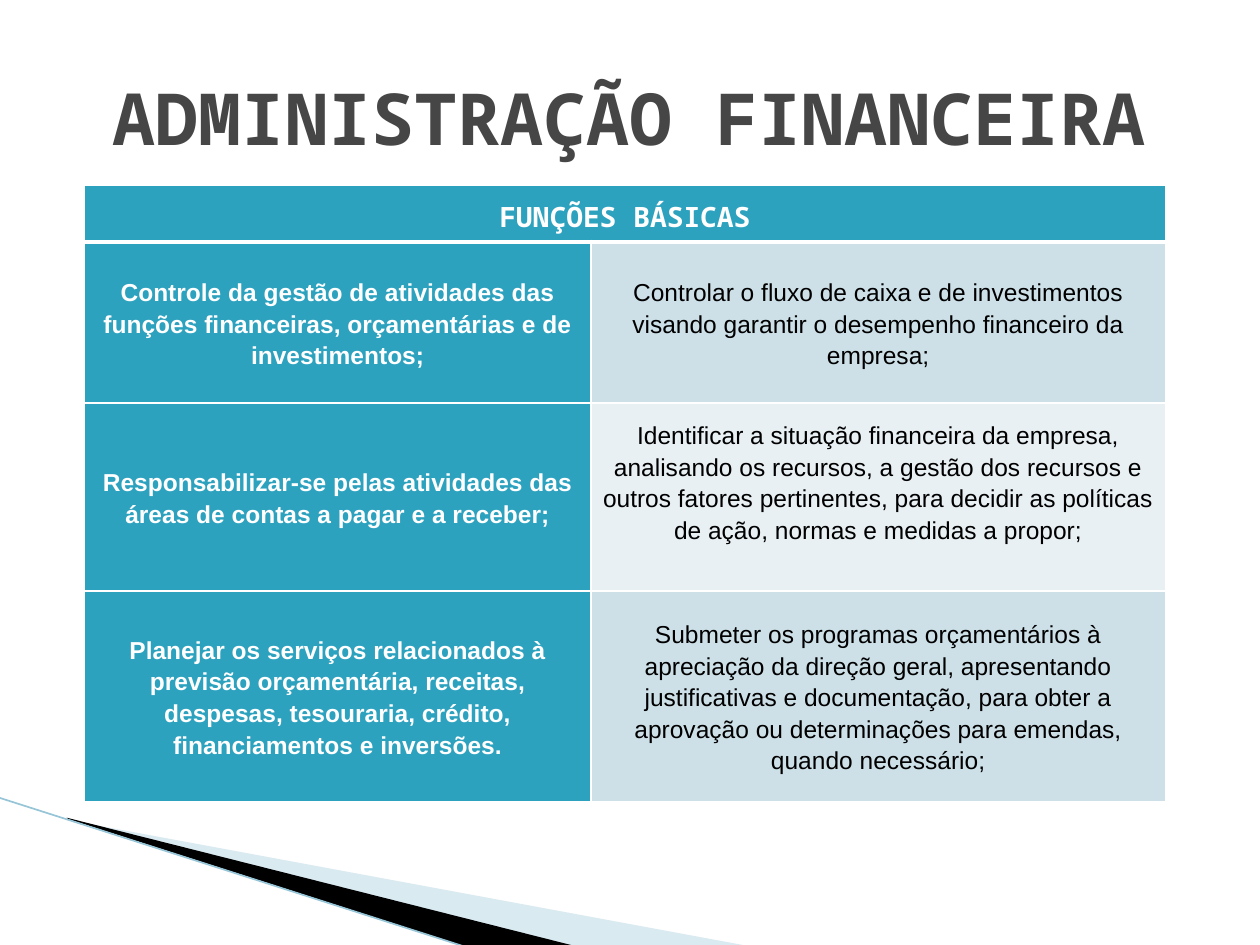
import pptx
import pptx.util
import pptx.dml.color
import pptx.enum.text
import pptx.enum.shapes
import pptx.oxml.ns
import lxml.etree
from pptx.util import Inches

COLORS = {
    "white": "FFFFFF", "black": "000000", "title": "464646", "teal": "2DA2BF",
    "band": "CDE0E8", "light": "E8F0F4", "wedge": "A0CBDC", "edge": "97C5D8",
}
MONO, SANS = "Noto Sans Mono", "Arial"
HEADING = "FUNÇÕES BÁSICAS"
FUNCTIONS = [
    ("Controle da gestão de atividades das funções financeiras, orçamentárias e de investimentos;",
     "Controlar o fluxo de caixa e de investimentos visando garantir o desempenho financeiro da empresa;"),
    ("Responsabilizar-se pelas atividades das áreas de contas a pagar e a receber;",
     "Identificar a situação financeira da empresa, analisando os recursos, a gestão dos recursos e "
     "outros fatores pertinentes, para decidir as políticas de ação, normas e medidas a propor;"),
    ("Planejar os serviços relacionados à previsão orçamentária, receitas, despesas, tesouraria, "
     "crédito, financiamentos e inversões.",
     "Submeter os programas orçamentários à apreciação da direção geral, apresentando justificativas "
     "e documentação, para obter a aprovação ou determinações para emendas, quando necessário;"),
]


class SlideBuilder:
    """Holds the style and the current slide, and draws each kind of element."""

    def __init__(self, prs):
        self.s = prs.slides.add_slide(prs.slide_layouts[6])

    def rgb(self, name):
        return pptx.dml.color.RGBColor.from_string(COLORS[name])

    def sub(self, parent, tag, **attrs):
        return lxml.etree.SubElement(parent, pptx.oxml.ns.qn(tag), attrs)

    def set_text(self, tf, text, size, font, color, bold, spacing=1.0):
        tf.text = text
        tf.word_wrap = True
        p = tf.paragraphs[0]
        p.alignment = pptx.enum.text.PP_ALIGN.CENTER
        p.line_spacing = spacing
        for r in p.runs:
            r.font.size = pptx.util.Pt(size)
            r.font.name = font
            r.font.bold = bold
            r.font.color.rgb = self.rgb(color)

    def title(self, text, left, top, width, height):
        box = self.s.shapes.add_textbox(Inches(left), Inches(top), Inches(width), Inches(height))
        box.text_frame.vertical_anchor = pptx.enum.text.MSO_ANCHOR.MIDDLE
        self.set_text(box.text_frame, text, 41, MONO, "title", True)

    def wedge(self, points, color, opacity=100):
        start, *rest = [(Inches(x), Inches(y)) for x, y in points]
        builder = self.s.shapes.build_freeform(*start)
        builder.add_line_segments(rest, close=True)
        sp = builder.convert_to_shape()
        sp.shadow.inherit = False
        sp.fill.solid()
        sp.fill.fore_color.rgb = self.rgb(color)
        sp.line.fill.background()
        if opacity < 100:
            fill = sp._element.spPr.find(".//" + pptx.oxml.ns.qn("a:srgbClr"))
            self.sub(fill, "a:alpha", val=str(opacity * 1000))

    def line(self, x1, y1, x2, y2, color, width):
        cn = self.s.shapes.add_connector(
            pptx.enum.shapes.MSO_CONNECTOR.STRAIGHT, Inches(x1), Inches(y1), Inches(x2), Inches(y2))
        cn.line.color.rgb = self.rgb(color)
        cn.line.width = pptx.util.Pt(width)
        self.sub(cn._element.spPr, "a:effectLst")

    def borders(self, cell, **widths):
        tc_pr = cell._tc.get_or_add_tcPr()
        for side in "LRTB":
            width = int(pptx.util.Pt(widths.get(side, 1)))
            ln = self.sub(tc_pr, "a:ln" + side, w=str(width))
            self.sub(self.sub(ln, "a:solidFill"), "a:srgbClr", val=COLORS["white"])

    def cell(self, cell, text, fill, size=14, font=SANS, color="white", bold=True, **widths):
        self.borders(cell, **widths)
        cell.fill.solid()
        cell.fill.fore_color.rgb = self.rgb(fill)
        cell.margin_left = cell.margin_right = Inches(0.05)
        cell.margin_top = cell.margin_bottom = 0
        cell.vertical_anchor = pptx.enum.text.MSO_ANCHOR.MIDDLE
        self.set_text(cell.text_frame, text, size, font, color, bold, 1.15)

    def table(self, left, top, widths, heights):
        table = self.s.shapes.add_table(
            len(heights), len(widths), Inches(left), Inches(top),
            Inches(sum(widths)), Inches(sum(heights))).table
        for column, width in zip(table.columns, widths):
            column.width = Inches(width)
        for row, height in zip(table.rows, heights):
            row.height = Inches(height)
        return table


def main():
    prs = pptx.Presentation()
    prs.slide_width, prs.slide_height = Inches(10), Inches(7.5)
    slide = SlideBuilder(prs)
    slide.wedge([(0.55, 6.51), (5.95, 7.51), (4.56, 7.51), (0.55, 6.5)], "wedge", 40)
    slide.wedge([(0.53, 6.49), (4.57, 7.51), (3.72, 7.52), (0.54, 6.5)], "black")
    slide.line(-0.01, 6.33, 3.71, 7.52, "edge", 0.95)

    table = slide.table(0.67, 1.47, [4.02, 4.56], [0.45, 1.28, 1.49, 1.67])
    table.cell(0, 0).merge(table.cell(0, 1))
    slide.cell(table.cell(0, 0), HEADING, "teal", size=16, font=MONO, B=3)
    for row, (duty, goal) in enumerate(FUNCTIONS, 1):
        top = 3 if row == 1 else 1
        slide.cell(table.cell(row, 0), duty, "teal", T=top)
        slide.cell(table.cell(row, 1), goal, "band" if row % 2 else "light",
                   color="black", bold=False, T=top)
    table.cell(2, 1).margin_bottom = Inches(0.25)

    slide.title("ADMINISTRAÇÃO FINANCEIRA", 0.5, 0.3, 9, 1.25)
    prs.save("out.pptx")


if __name__ == "__main__":
    main()
